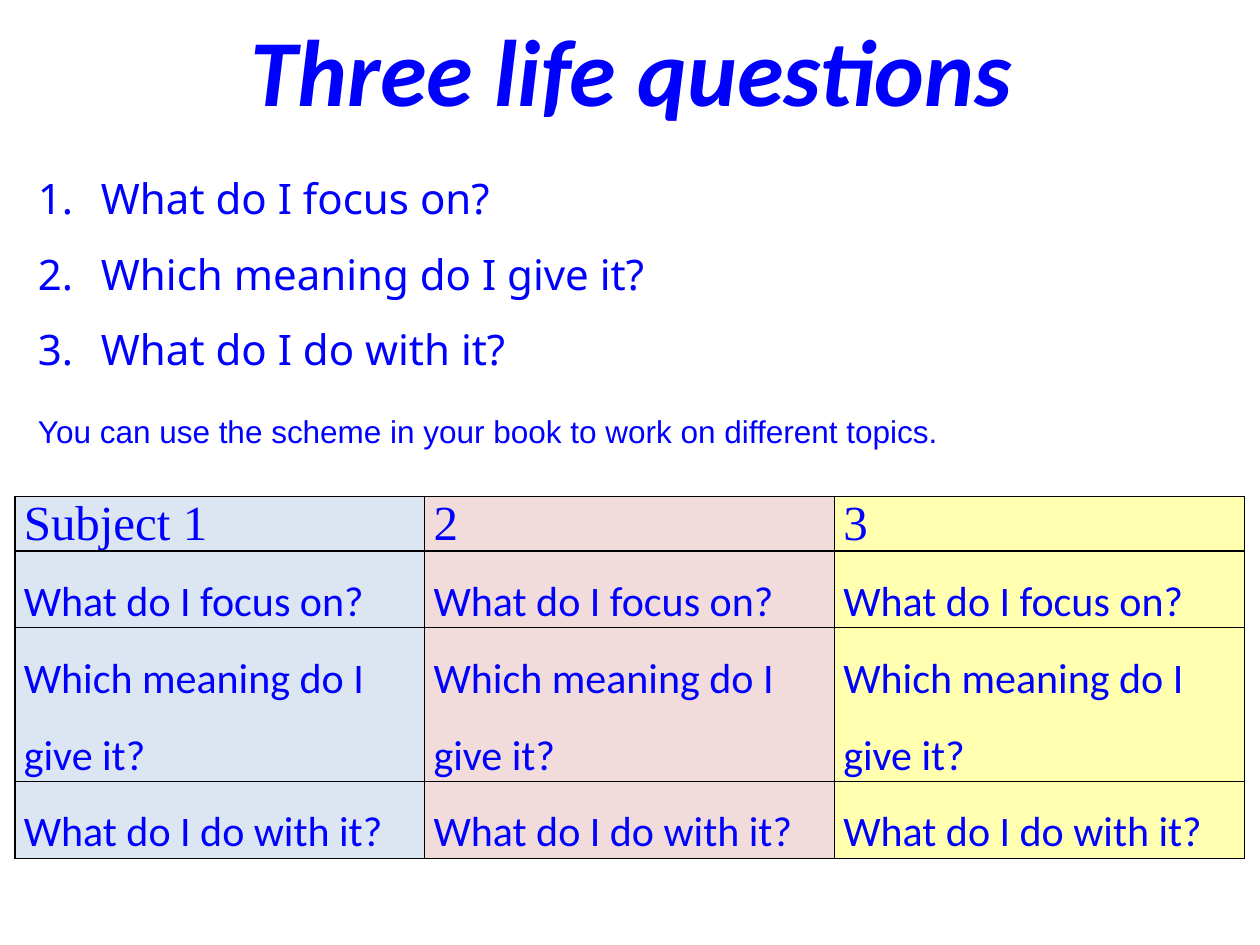
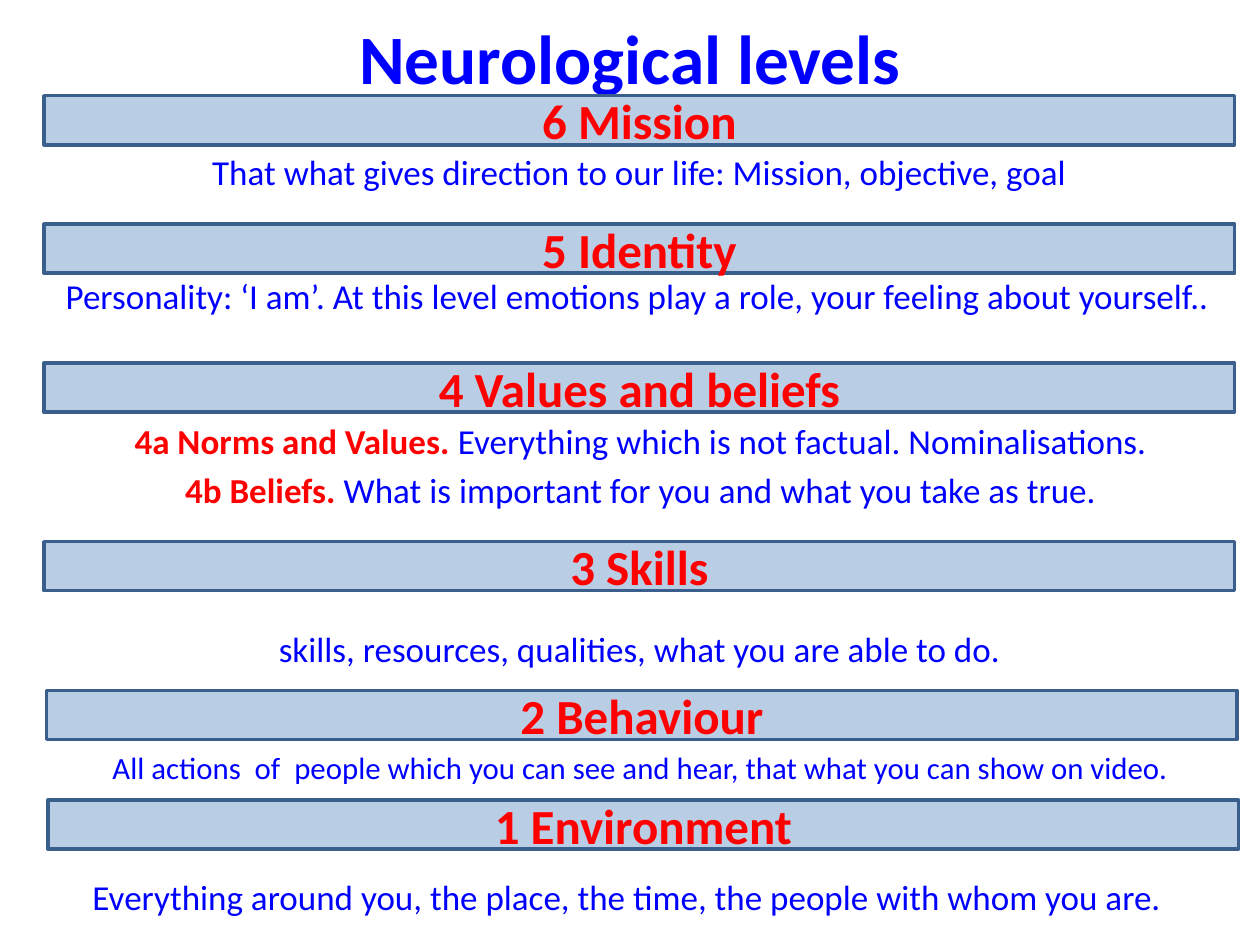
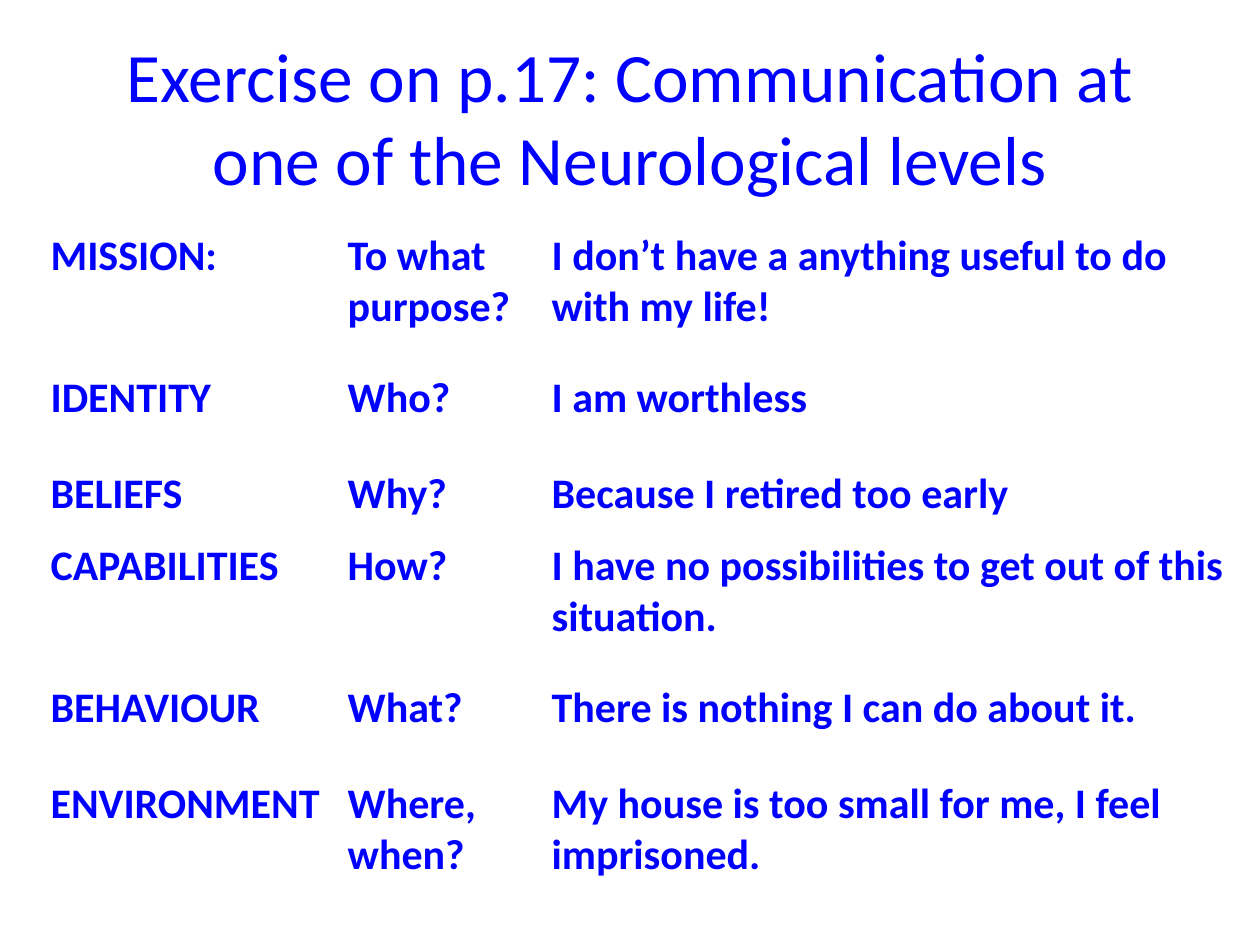
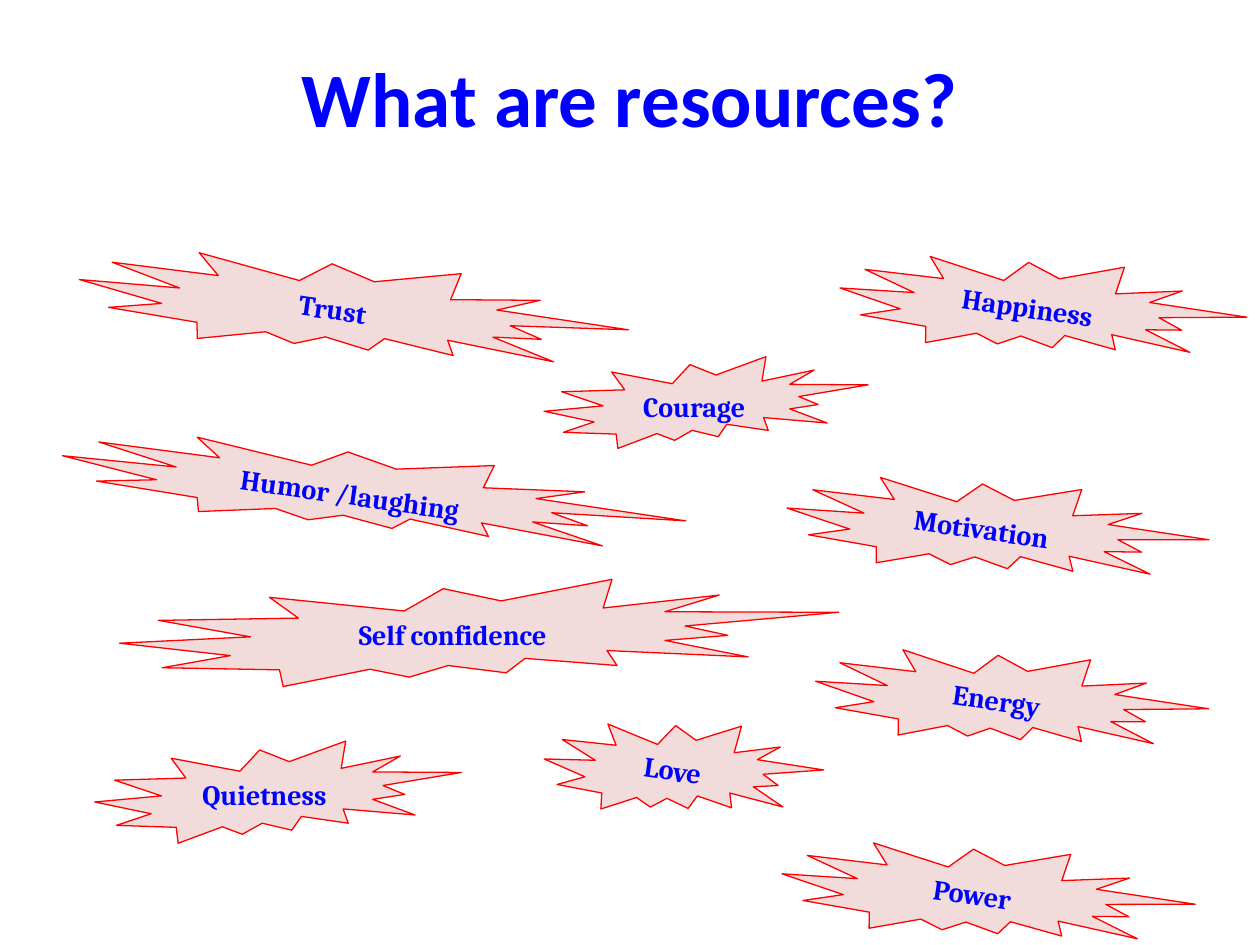
from lxml.etree import SubElement as Sub
from pptx import Presentation
from pptx.dml.color import RGBColor as Rgb
from pptx.enum.shapes import MSO_SHAPE as Form
from pptx.enum.text import MSO_ANCHOR as Anchor, MSO_AUTO_SIZE as Auto, PP_ALIGN as Align
from pptx.oxml.ns import qn
from pptx.util import Cm, Pt

BLUE, RED, BLACK = "0000FF", "FF0000", "000000"
BAR, EDGE = "B9CDE5", "3A5F8C"
ROSE = "F2DCDB"
TINTS = ["DCE6F2", ROSE, "FFFFAF"]
SANS = "Calibri"
LIST, ONLY = 1, 5

ASKS = ["What do I focus on?", "Which meaning do I give it?", "What do I do with it?"]
HINT = "You can use the scheme in your book to work on different topics."
HEADS = ["Subject 1", "2", "3"]

NORMS = [
    ("4a Norms and Values. ", "Everything which is not factual. Nominalisations."),
    ("4b Beliefs. ", "What is important for you and what you take as true."),
]
LEVELS = [
    ("6 Mission", 0.89, 1.93),
    ("5 Identity", 0.89, 4.52),
    ("4 Values and beliefs", 0.89, 7.32),
    ("3 Skills", 0.89, 10.92),
    ("2 Behaviour", 0.94, 13.92),
    ("1 Environment", 0.97, 16.13),
]
NOTES = [
    ("That what gives direction to our life: Mission, objective, goal",
     (0.89, 2.9, 24, 1.12), 20, 0, 1),
    ("Personality: ‘I am’. At this level emotions play a role, your feeling about yourself..",
     (0.3, 5.41, 25.1, 1.12), 20, 0, 1),
    ("skills, resources, qualities, what you are able to do.",
     (1.68, 12.52, 22.43, 0.99), 20, 4, 1),
    ("All actions  of  people which you can see and hear, that what you can show on video.",
     (0.71, 15.11, 24.41, 0.99), 17.6, 3.5, 0.8),
    ("Everything around you, the place, the time, the people with whom you are.",
     (1.02, 17.53, 23.24, 0.79), 20, 4, 1),
]
TALK = [
    ("MISSION:", "To what purpose?", "I don’t have a anything useful to do with my life!"),
    ("IDENTITY", "Who?", "I am worthless"),
    ("BELIEFS", "Why?", "Because I retired too early"),
    ("CAPABILITIES", "How?", "I have no possibilities to get out of this situation."),
    ("BEHAVIOUR", "What?", "There is nothing I can do about it."),
    ("ENVIRONMENT", "Where, when?", "My house is too small for me, I feel imprisoned."),
]
TILT = 8.3
BURSTS = [
    ("Trust", (1.57, 5.21, 11.1, 2.06), TILT),
    ("Courage", (10.97, 7.19, 6.53, 1.85), 0),
    ("Happiness", (16.92, 5.16, 8.2, 2.08), TILT),
    ("Humor /laughing", (1.22, 9.04, 12.62, 1.78), TILT),
    ("Motivation", (15.85, 9.63, 8.51, 2.06), TILT),
    ("Love", (10.97, 14.48, 5.61, 2.06), TILT),
    ("Energy", (16.43, 13.08, 7.92, 2.06), TILT),
    ("Power", (15.75, 16.99, 8.33, 2.06), TILT),
    ("Self confidence", (2.41, 11.68, 14.5, 2.16), 0),
    ("Quietness", (1.91, 14.94, 7.39, 2.06), 0),
]


def paint(part, tone):
    """Give a fill a solid colour."""
    part.solid()
    part.fore_color.rgb = Rgb.from_string(tone)


def lengths(box):
    """Turn a box in centimetres into lengths."""
    return [Cm(n) for n in box]


def place(shape, box):
    """Move and size a placeholder."""
    shape.left, shape.top, shape.width, shape.height = lengths(box)


def write(para, text, size, tone=BLUE, face=SANS, bold=False, slant=False):
    """Add one run to a paragraph."""
    run = para.add_run()
    run.text = text
    font = run.font
    font.size, font.name, font.bold, font.italic = Pt(size), face, bold, slant
    paint(font.fill, tone)


def space(para, align=Align.LEFT, line=1, before=0, after=0):
    """Set alignment and spacing of a paragraph."""
    para.alignment, para.line_spacing = align, line
    para.space_before, para.space_after = Pt(before), Pt(after)


def bullet(para, kind, left=0, **more):
    """Set the bullet and a hanging indent."""
    props = para._p.get_or_add_pPr()
    props.set("marL", str(Cm(left)))
    props.set("indent", str(-Cm(left)))
    Sub(props, qn("a:" + kind), **more)


def frame(shape, anchor=Anchor.TOP):
    """Prepare a text frame that wraps at a fixed size."""
    text = shape.text_frame
    text.auto_size, text.word_wrap, text.vertical_anchor = Auto.NONE, True, anchor
    return text


def lines(text, count):
    """Yield the paragraphs of a frame, adding what is missing."""
    yield text.paragraphs[0]
    for _ in range(count - 1):
        yield text.add_paragraph()


def start(deck, kind, box, title, size, **style):
    """Add a slide with its title."""
    slide = deck.slides.add_slide(deck.slide_layouts[kind])
    place(slide.shapes.title, box)
    para = frame(slide.shapes.title, Anchor.MIDDLE).paragraphs[0]
    space(para, Align.CENTER)
    write(para, title, size, **style)
    return slide


def figure(slide, form, box, fill, edge, width):
    """Add a filled and outlined shape."""
    shape = slide.shapes.add_shape(form, *lengths(box))
    shape.shadow.inherit = False
    paint(shape.fill, fill)
    paint(shape.line.fill, edge)
    shape.line.width = Pt(width)
    return shape


def grid(slide, left, top, cols, rows):
    """Add an unstyled table with given column widths and row heights."""
    box = left, top, sum(cols), sum(rows)
    table = slide.shapes.add_table(len(rows), len(cols), *lengths(box)).table
    table.first_row = table.horz_banding = False
    for col, wide in zip(table.columns, cols):
        col.width = Cm(wide)
    for row, high in zip(table.rows, rows):
        row.height = Cm(high)
    return table


def fit(cell, side):
    """Set cell margins and return its paragraph."""
    cell.margin_left = cell.margin_right = Cm(side)
    cell.margin_top = cell.margin_bottom = 0
    return cell.text_frame.paragraphs[0]


def border(cell):
    """Draw thin black lines around a cell."""
    props = cell._tc.get_or_add_tcPr()
    for side in "LRTB":
        line = Sub(props, qn("a:ln" + side), w=str(Pt(1)))
        Sub(Sub(line, qn("a:solidFill")), qn("a:srgbClr"), val=BLACK)


def asks(shape, box):
    """Fill the numbered list and the hint below it."""
    place(shape, box)
    text = frame(shape, Anchor.MIDDLE)
    *items, last = lines(text, len(ASKS) + 1)
    for para, ask in zip(items, ASKS):
        space(para, line=1.5)
        bullet(para, "buAutoNum", 1.27, type="arabicPeriod")
        write(para, ask, 24, face="Noto Sans")
    space(last, line=2)
    bullet(last, "buNone")
    write(last, HINT, 18, face="Arial")


def scheme(slide, left, top):
    """Draw the tinted table with one subject per column."""
    table = grid(slide, left, top, [8.26, 8.26, 8.27], [1.09, 1.55, 3.1, 1.55])
    for x, (head, tint) in enumerate(zip(HEADS, TINTS)):
        for y, words in enumerate([head] + ASKS):
            cell = table.cell(y, x)
            para = fit(cell, 0.18)
            border(cell)
            paint(cell.fill, tint)
            if y:
                space(para, line=1.5)
                write(para, words, 24)
            else:
                write(para, words, 28, face="Times New Roman")


def level(slide, name, left, top):
    """Draw the bar of one level."""
    bar = figure(slide, Form.RECTANGLE, (left, top, 24, 0.99), BAR, EDGE, 2)
    para = frame(bar, Anchor.MIDDLE).paragraphs[0]
    space(para, Align.CENTER)
    write(para, name, 28, RED, bold=True)


def note(slide, words, box, size, before, line):
    """Write the centred text below a bar."""
    para = frame(slide.shapes.add_textbox(*lengths(box))).paragraphs[0]
    space(para, Align.CENTER, line, before)
    write(para, words, size)


def norms(shape, box):
    """Fill the two lines on values and beliefs."""
    place(shape, box)
    for para, (lead, rest) in zip(lines(frame(shape), len(NORMS)), NORMS):
        space(para, Align.CENTER, before=4)
        bullet(para, "buNone")
        write(para, lead, 20, RED, bold=True)
        write(para, rest, 20)


def talk(slide, left, top):
    """Draw the plain table of levels, questions and sayings."""
    table = grid(slide, left, top, [5.99, 4.11, 14.4], [2.87, 1.93, 1.45, 2.87, 1.93, 3.38])
    for y, row in enumerate(TALK):
        for x, words in enumerate(row):
            cell = table.cell(y, x)
            cell.fill.background()
            write(fit(cell, 0.13), words, 24, bold=True)


def burst(slide, word, box, turn):
    """Draw one resource as a jagged star."""
    star = figure(slide, Form.EXPLOSION2, box, ROSE, RED, 0.75)
    star.rotation = turn
    para = frame(star).paragraphs[0]
    space(para, Align.CENTER, after=10)
    write(para, word, 16, face="Cambria", bold=True)


def main():
    """Build the four slides."""
    deck = Presentation()
    deck.slide_width, deck.slide_height = Cm(25.4), Cm(19.05)

    slide = start(deck, LIST, (1.3, 0, 22.86, 2.77), "Three life questions", 54,
                  bold=True, slant=True)
    scheme(slide, 0.3, 10.01)
    asks(slide.placeholders[1], (0.51, 2.82, 24.89, 6.4))

    slide = start(deck, LIST, (1.27, 0.13, 22.86, 2.01), "Neurological levels", 39.6,
                  bold=True)
    norms(slide.placeholders[1], (1.7, 8.33, 22.43, 2.39))
    for item in LEVELS:
        level(slide, *item)
    for item in NOTES:
        note(slide, *item)

    slide = start(deck, ONLY, (1.27, 0.76, 22.86, 3.18),
                  "Exercise on p.17: Communication at one of the Neurological levels", 39.6)
    talk(slide, 0.89, 4.65)

    slide = start(deck, ONLY, (1.27, 0.76, 22.86, 2.36), "What are resources?", 44,
                  bold=True)
    for item in BURSTS:
        burst(slide, *item)

    deck.save("out.pptx")


if __name__ == "__main__":
    main()
